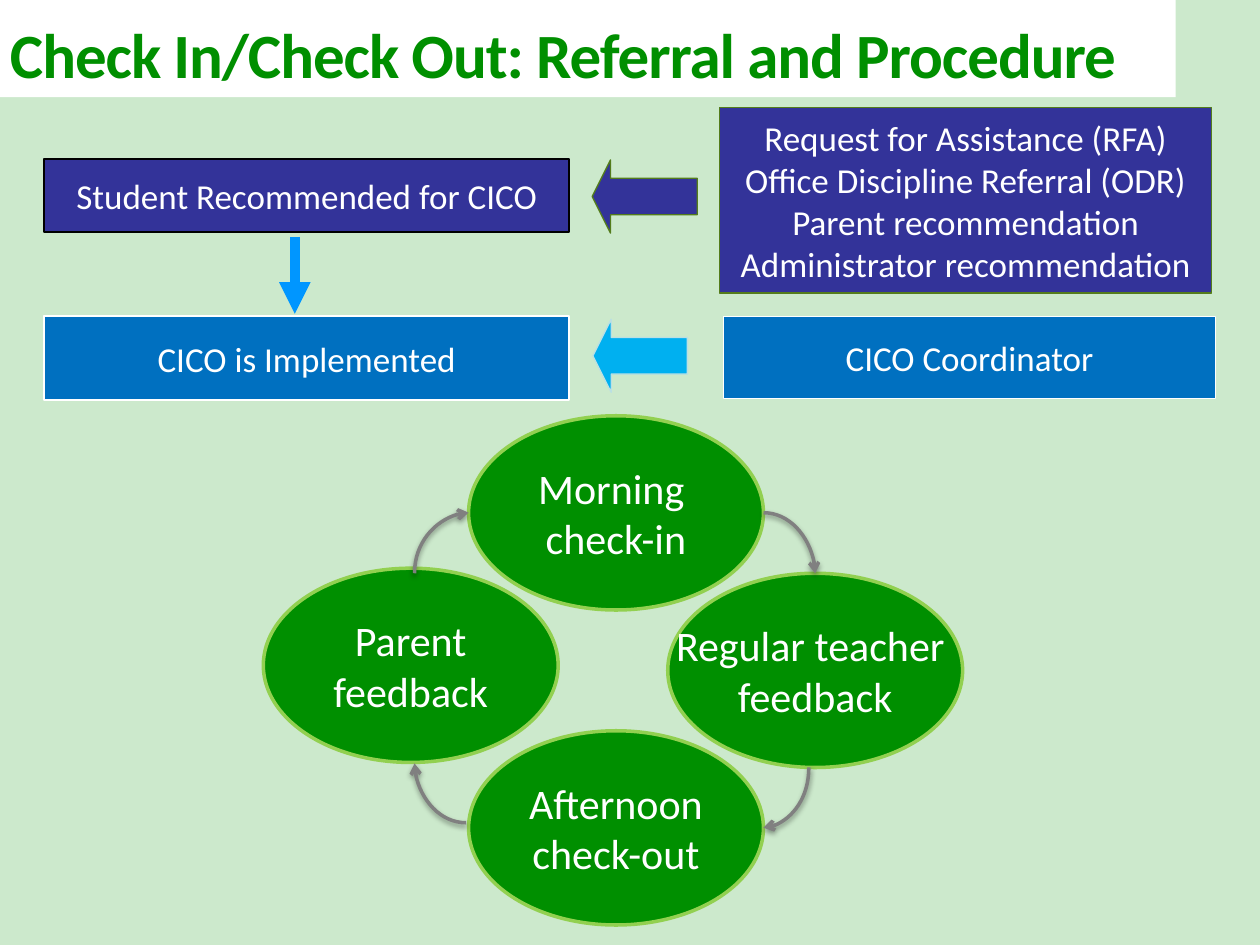
import pptx
import pptx.util
import pptx.dml.color
import pptx.enum.shapes
import pptx.enum.text
import pptx.oxml
import pptx.oxml.ns

Pt = pptx.util.Pt
RGB = pptx.dml.color.RGBColor
SHAPE = pptx.enum.shapes.MSO_SHAPE
CONNECTOR = pptx.enum.shapes.MSO_CONNECTOR
ALIGN = pptx.enum.text.PP_ALIGN
ANCHOR = pptx.enum.text.MSO_ANCHOR

PALE_GREEN = RGB(0xCC, 0xE9, 0xCC)
GREEN = RGB(0x00, 0x8F, 0x00)
LIME = RGB(0x92, 0xD0, 0x50)
OLIVE = RGB(0x54, 0x7C, 0x1C)
INDIGO = RGB(0x33, 0x33, 0x99)
BLUE = RGB(0x00, 0x70, 0xC0)
BRIGHT_BLUE = RGB(0x00, 0x96, 0xFF)
SKY = RGB(0x00, 0xB0, 0xF0)
ICE = RGB(0xBB, 0xE0, 0xE3)
GRAY = RGB(0x80, 0x80, 0x80)
WHITE = RGB(0xFF, 0xFF, 0xFF)
BLACK = RGB(0x00, 0x00, 0x00)

TITLE = "Check In/Check Out: Referral and Procedure"
TITLE_BOX = (-1.4, -18, 673.2, 73.5)

STAGE_SIZE = (168.5, 111)
STAGES = [
    (["Parent", "feedback"], (150.5, 324.7)),
    (["Regular teacher ", "feedback"], (381.6, 327.6)),
    (["Afternoon", "check-out"], (267.8, 417.6)),
    (["Morning ", "check-in"], (267.8, 237.6)),
]

STEPS = [
    (["Student Recommended for CICO"], (25.2, 90.7, 300.2, 41.8), INDIGO, BLACK, 1),
    (["CICO is Implemented"], (25.2, 180.7, 300.2, 48), BLUE, WHITE, 1),
    (["Request for Assistance (RFA)", "Office Discipline Referral (ODR)",
      "Parent recommendation", "Administrator recommendation"],
     (411, 61.4, 281.5, 106), INDIGO, OLIVE, 0.75),
    (["CICO Coordinator"], (413.3, 180.7, 281.5, 47.2), BLUE, WHITE, 0.75),
]

SOURCE_ARROWS = [
    ((338.4, 91.4, 60, 41.8), INDIGO, OLIVE),
    ((338.8, 182.4, 54, 41.8), SKY, ICE),
]

STEP_ARROW = ((168.5, 135.4), (168.5, 179.3))

CYCLE_ARROWS = [
    ((436.3, 293), (465.8, 327.6), False),
    ((462.2, 438.5), (436.3, 473), True),
    ((266.4, 470.2), (236.9, 436.3), False),
    ((236.9, 327.6), (267.8, 293), True),
]

NO_EFFECTS = "<a:effectLst %s/>" % pptx.oxml.ns.nsdecls("a")
SOFT_SHADOW = (
    '<a:effectLst %s><a:outerShdw blurRad="%d" dist="%d" dir="5400000" rotWithShape="0">'
    '<a:srgbClr val="000000"><a:alpha val="38000"/></a:srgbClr></a:outerShdw></a:effectLst>'
    % (pptx.oxml.ns.nsdecls("a"), Pt(3.1), Pt(1.6))
)


def add_block(slide, kind, box, fill, outline=None, weight=0):
    block = slide.shapes.add_shape(kind, *map(Pt, box))
    block.shadow.inherit = False
    block.fill.solid()
    block.fill.fore_color.rgb = fill
    if outline is None:
        block.line.fill.background()
    else:
        block.line.color.rgb = outline
        block.line.width = Pt(weight)
    return block


def write(block, lines, size, color=WHITE, align=ALIGN.CENTER, anchor=ANCHOR.MIDDLE,
          wrap=False, bold=False):
    frame = block.text_frame
    frame.word_wrap = wrap
    frame.vertical_anchor = anchor
    for index, line in enumerate(lines):
        paragraph = frame.paragraphs[0] if index == 0 else frame.add_paragraph()
        paragraph.alignment = align
        run = paragraph.add_run()
        run.text = line
        run.font.name = "Calibri"
        run.font.size = Pt(size)
        run.font.bold = bold
        run.font.color.rgb = color
    return run


def add_arrow(slide, kind, start, end, color, weight, head, effects):
    arrow = slide.shapes.add_connector(kind, *map(Pt, start + end))
    arrow.line.color.rgb = color
    arrow.line.width = Pt(weight)
    properties = arrow._element.spPr
    line = properties.find(pptx.oxml.ns.qn("a:ln"))
    line.append(pptx.oxml.parse_xml(
        '<a:tailEnd %s type="%s"/>' % (pptx.oxml.ns.nsdecls("a"), head)))
    properties.append(pptx.oxml.parse_xml(effects))
    return properties


def add_cycle_arrow(slide, start, end, vertical_first):
    if vertical_first:
        (x1, y1), (x2, y2) = start, end
        mid_x, mid_y = (x1 + x2) / 2, (y1 + y2) / 2
        half_x, half_y = (y2 - y1) / 2, (x1 - x2) / 2
        start = (mid_x - half_x, mid_y - half_y)
        end = (mid_x + half_x, mid_y + half_y)
    properties = add_arrow(slide, CONNECTOR.CURVE, start, end, GRAY, 2, "arrow", SOFT_SHADOW)
    properties.find(pptx.oxml.ns.qn("a:prstGeom")).set("prst", "curvedConnector2")
    if vertical_first:
        properties.find(pptx.oxml.ns.qn("a:xfrm")).set("rot", "5400000")


def main():
    deck = pptx.Presentation()
    deck.slide_width, deck.slide_height = Pt(720), Pt(540)
    slide = deck.slides.add_slide(deck.slide_layouts[6])
    slide.background.fill.solid()
    slide.background.fill.fore_color.rgb = PALE_GREEN

    for lines, corner in STAGES:
        write(add_block(slide, SHAPE.OVAL, corner + STAGE_SIZE, GREEN, LIME, 2), lines, 24)
    for lines, box, fill, outline, weight in STEPS:
        write(add_block(slide, SHAPE.RECTANGLE, box, fill, outline, weight), lines, 20)
    for box, fill, outline in SOURCE_ARROWS:
        source_arrow = add_block(slide, SHAPE.RIGHT_ARROW, box, fill, outline, 0.75)
        source_arrow.rotation = 180
        source_arrow.adjustments[0] = 0.5
        source_arrow.adjustments[1] = 0.25

    add_arrow(slide, CONNECTOR.STRAIGHT, *STEP_ARROW, BRIGHT_BLUE, 6, "triangle", NO_EFFECTS)
    for start, end, vertical_first in CYCLE_ARROWS:
        add_cycle_arrow(slide, start, end, vertical_first)

    title = add_block(slide, SHAPE.RECTANGLE, TITLE_BOX, WHITE)
    title_run = write(title, [TITLE], 36, GREEN, ALIGN.LEFT, ANCHOR.BOTTOM, True, True)
    title_run.font._element.set("spc", "-60")

    deck.save("out.pptx")


if __name__ == "__main__":
    main()
